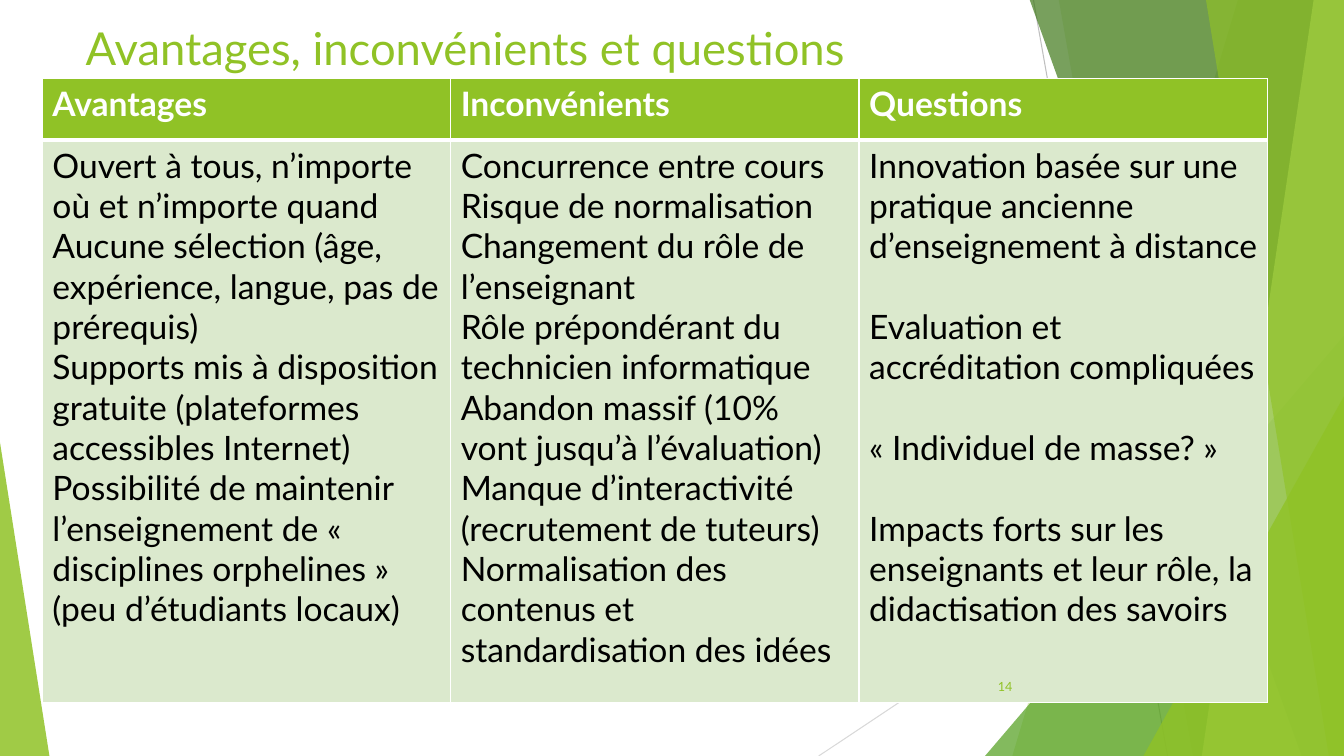
from dataclasses import dataclass

from lxml import etree
from pptx import Presentation
from pptx.dml.color import RGBColor
from pptx.enum.shapes import MSO_CONNECTOR, MSO_SHAPE
from pptx.enum.text import MSO_ANCHOR, PP_ALIGN
from pptx.oxml import parse_xml
from pptx.oxml.ns import nsdecls, qn
from pptx.util import Pt

PX = 9144  # EMU in one px, at 100 px to the inch
WIDTH, HEIGHT = 1333, 750
TITLE_ONLY = 5

STRAIGHT = MSO_CONNECTOR.STRAIGHT
TRIANGLE = MSO_SHAPE.RIGHT_TRIANGLE.ISOSCELES_TRIANGLE
MIDDLE = MSO_ANCHOR.MIDDLE
LEFT, RIGHT = PP_ALIGN.LEFT, PP_ALIGN.RIGHT

FONT = "Lato"
WHITE = RGBColor(0xFF, 0xFF, 0xFF)
BLACK = RGBColor(0x00, 0x00, 0x00)
GREEN = RGBColor(0x90, 0xC2, 0x26)
MID_GREEN = RGBColor(0x54, 0xA0, 0x21)
DARK_GREEN = RGBColor(0x3F, 0x78, 0x19)
LIGHT_GREEN = RGBColor(0xC0, 0xE4, 0x74)
PALE_GREEN = RGBColor(0xDB, 0xE9, 0xCD)
GREY = RGBColor(0xBF, 0xBF, 0xBF)
LIGHT_GREY = RGBColor(0xD9, 0xD9, 0xD9)


@dataclass(frozen=True)
class Line:
    start: tuple[int, int]
    end: tuple[int, int]
    color: RGBColor


@dataclass(frozen=True)
class Band:
    """Full-height band running to the right edge of the slide."""
    top_x: int
    bottom_x: int
    color: RGBColor
    opacity: int


@dataclass(frozen=True)
class Triangle:
    """Triangle standing on the bottom edge, with its apex at one side."""
    left: int
    top: int
    width: int
    apex: int
    color: RGBColor
    opacity: int


@dataclass(frozen=True)
class Column:
    heading: str
    items: tuple[str, ...]
    gap: float = 0


DECORATIONS = (
    Line((1025, 0), (1158, 750), GREY),
    Line((1333, 403), (812, 750), LIGHT_GREY),
    Band(1228, 1004, GREEN, 30),
    Band(1050, 1183, GREEN, 20),
    Triangle(977, 333, 356, 1, MID_GREEN, 72),
    Band(1021, 1291, DARK_GREEN, 70),
    Band(1303, 1192, LIGHT_GREEN, 70),
    Band(1196, 1318, GREEN, 65),
    Triangle(1134, 393, 199, 1, GREEN, 80),
    Triangle(0, 439, 49, 0, GREEN, 85),
)

COLUMNS = (
    Column("Avantages", (
        "Ouvert à tous, n’importe où et n’importe quand",
        "Aucune sélection (âge, expérience, langue, pas de prérequis)",
        "Supports mis à disposition gratuite (plateformes accessibles Internet)",
        "Possibilité de maintenir l’enseignement de « disciplines orphelines » "
        "(peu d’étudiants locaux)",
    )),
    Column("Inconvénients", (
        "Concurrence entre cours",
        "Risque de normalisation",
        "Changement du rôle de l’enseignant",
        "Rôle prépondérant du technicien informatique",
        "Abandon massif (10% vont jusqu’à l’évaluation)",
        "Manque d’interactivité (recrutement de tuteurs)",
        "Normalisation des contenus et standardisation des idées",
    )),
    Column("Questions", (
        "Innovation basée sur une pratique ancienne d’enseignement à distance",
        "Evaluation et accréditation compliquées",
        "« Individuel de masse? »",
        "Impacts forts sur les enseignants et leur rôle, la didactisation des savoirs",
    ), gap=28.8),
)
COLUMN_WIDTH = 405
ROW_HEIGHTS = (61, 558)


def px(*lengths: int) -> list[int]:
    return [length * PX for length in lengths]


def paint(shape, color: RGBColor, opacity: int) -> None:
    shape.shadow.inherit = False
    shape.line.fill.background()
    shape.fill.solid()
    shape.fill.fore_color.rgb = color
    for color_element in shape.fill._xPr.iter(qn("a:srgbClr")):
        etree.SubElement(color_element, qn("a:alpha"), val=str(opacity * 1000))


def draw_line(slide, line: Line) -> None:
    connector = slide.shapes.add_connector(STRAIGHT, *px(*line.start, *line.end))
    connector.line.color.rgb = line.color
    connector.line.width = Pt(0.75)
    etree.SubElement(connector._element.spPr, qn("a:effectLst"))


def draw_band(slide, band: Band) -> None:
    builder = slide.shapes.build_freeform(band.top_x, -1, scale=PX)
    builder.add_line_segments(
        [(WIDTH, -1), (WIDTH, HEIGHT), (band.bottom_x, HEIGHT)], close=True)
    paint(builder.convert_to_shape(), band.color, band.opacity)


def draw_triangle(slide, triangle: Triangle) -> None:
    shape = slide.shapes.add_shape(TRIANGLE, *px(
        triangle.left, triangle.top, triangle.width, HEIGHT - triangle.top))
    shape.adjustments[0] = triangle.apex
    paint(shape, triangle.color, triangle.opacity)


def write(paragraph, text: str, size: float, color: RGBColor,
          bold: bool = False, align=LEFT) -> None:
    paragraph.alignment = align
    run = paragraph.add_run()
    run.text = text
    run.font.name = FONT
    run.font.size = Pt(size)
    run.font.bold = bold
    run.font.color.rgb = color


def format_cell(cell, fill: RGBColor, top: int, bottom: int) -> None:
    properties = cell._tc.get_or_add_tcPr()
    for side, points in (("L", 1), ("R", 1), ("T", top), ("B", bottom)):
        properties.append(parse_xml(
            f'<a:ln{side} {nsdecls("a")} w="{Pt(points)}"><a:solidFill>'
            f'<a:srgbClr val="{WHITE}"/></a:solidFill></a:ln{side}>'))
    cell.fill.solid()
    cell.fill.fore_color.rgb = fill


def draw_table(slide, columns: tuple[Column, ...]) -> None:
    table = slide.shapes.add_table(len(ROW_HEIGHTS), len(columns), *px(
        42, 78, COLUMN_WIDTH * len(columns), sum(ROW_HEIGHTS))).table
    for row, height in zip(table.rows, ROW_HEIGHTS):
        row.height = height * PX
    for index, column in enumerate(columns):
        table.columns[index].width = COLUMN_WIDTH * PX
        heading, body = table.cell(0, index), table.cell(1, index)
        format_cell(heading, GREEN, top=1, bottom=3)
        write(heading.text_frame.paragraphs[0], column.heading, 24, WHITE, bold=True)
        format_cell(body, PALE_GREEN, top=3, bottom=1)
        frame = body.text_frame
        for position, item in enumerate(column.items):
            paragraph = frame.add_paragraph() if position else frame.paragraphs[0]
            paragraph.space_before = Pt(column.gap if position else 0)
            write(paragraph, item, 24, BLACK)


def place_title(slide, text: str) -> None:
    title = slide.shapes.title
    slide.shapes._spTree.append(title._element)  # in front of the decorations
    title.left, title.top, title.width, title.height = px(75, 16, 1108, 62)
    title.text_frame.vertical_anchor = MIDDLE
    write(title.text_frame.paragraphs[0], text, 32.4, GREEN)


def draw_page_number(slide, number: str) -> None:
    frame = slide.shapes.add_textbox(*px(939, 661, 75, 40)).text_frame
    frame.word_wrap = True
    frame.vertical_anchor = MIDDLE
    write(frame.paragraphs[0], number, 9, GREEN, align=RIGHT)


def main() -> None:
    presentation = Presentation()
    presentation.slide_width, presentation.slide_height = px(WIDTH, HEIGHT)
    slide = presentation.slides.add_slide(presentation.slide_layouts[TITLE_ONLY])

    # Background decorations, from back to front
    painters = {Line: draw_line, Band: draw_band, Triangle: draw_triangle}
    for decoration in DECORATIONS:
        painters[type(decoration)](slide, decoration)

    # Content
    place_title(slide, "Avantages, inconvénients et questions")
    draw_table(slide, COLUMNS)
    draw_page_number(slide, "14")
    presentation.save("out.pptx")


if __name__ == "__main__":
    main()
